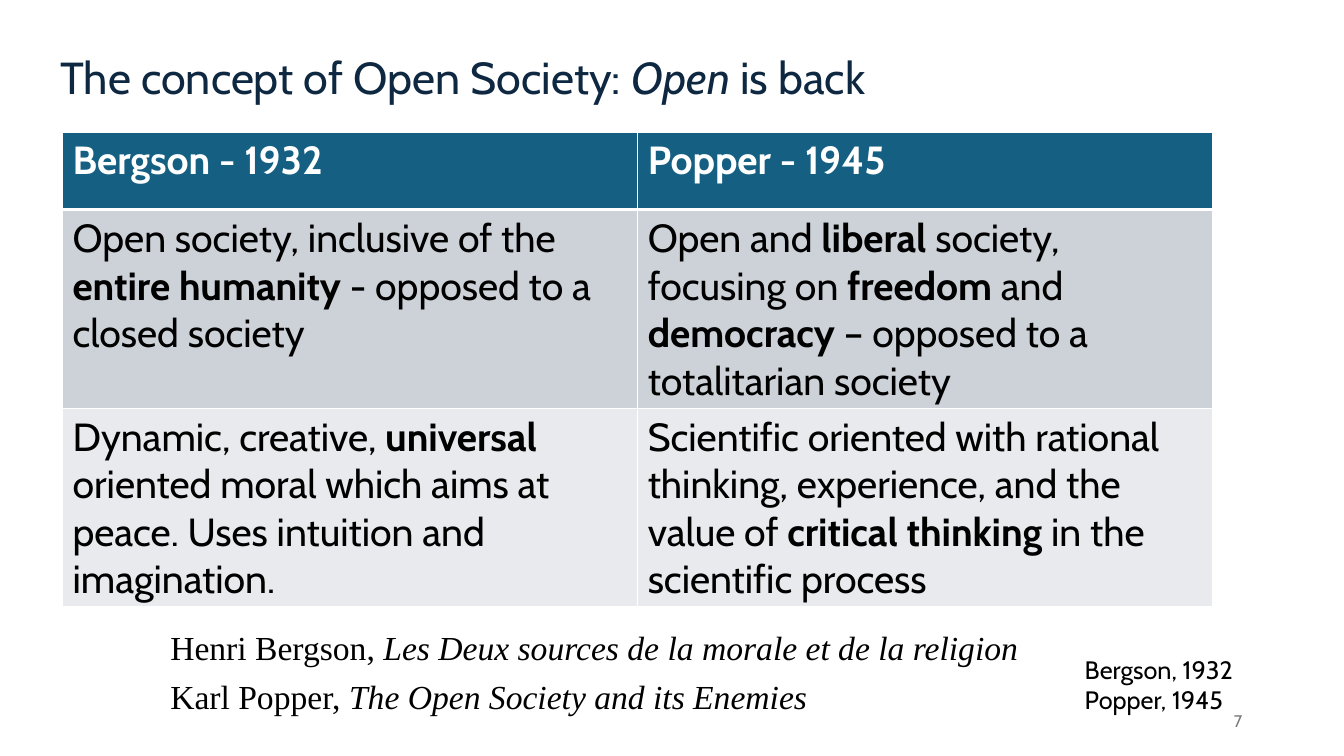
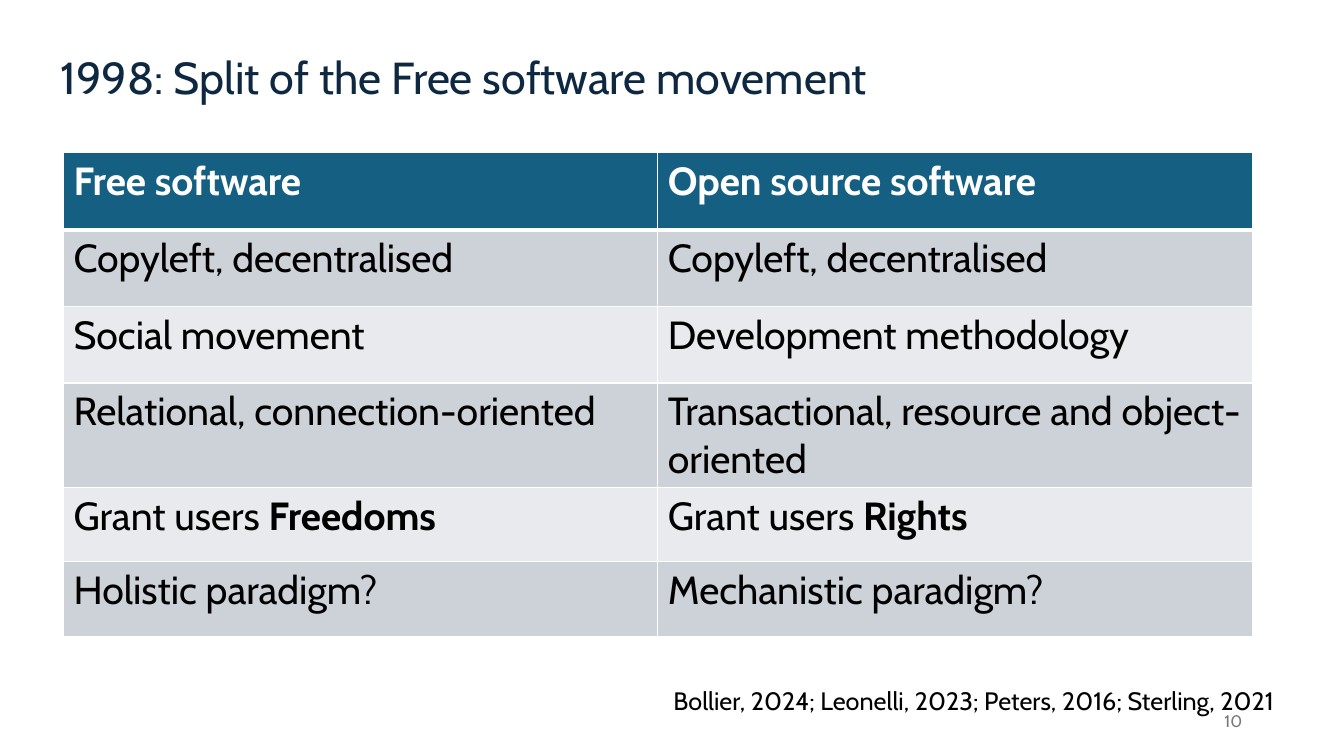
"""Build two comparison slides that share one theme, title and page number."""
from dataclasses import dataclass

from lxml.etree import SubElement
from pptx import Presentation
from pptx.dml.color import RGBColor
from pptx.enum.text import MSO_ANCHOR, MSO_AUTO_SIZE, PP_ALIGN
from pptx.oxml.ns import qn
from pptx.util import Pt

EMU_PER_PX = 9144


@dataclass(frozen=True)
class Theme:
    """Colours, fonts and type sizes of the deck."""

    title: str = "0E2841"
    body: str = "000000"
    muted: str = "797979"
    white: str = "FFFFFF"
    header: str = "156082"
    bands: tuple = ("CCD2D8", "E8EAED")
    font: str = "Cabin"
    book_font: str = "Times New Roman"
    title_size: int = 32
    table_size: int = 28
    book_size: int = 24
    source_size: int = 18
    number_size: int = 12
    grid_width: int = 1
    header_rule_width: int = 3


@dataclass(frozen=True)
class Box:
    """A region of a slide in px."""

    left: int
    top: int
    width: int
    height: int

    def emu(self):
        """Return the four lengths in EMU."""
        return [px(value) for value in (self.left, self.top, self.width, self.height)]


THEME = Theme()
SLIDE_WIDTH, SLIDE_HEIGHT = 1333, 750
NUMBER_BOX = Box(942, 695, 300, 40)


def px(value):
    """Convert px to EMU."""
    return value * EMU_PER_PX


def write(paragraph, text, size, color, font=THEME.font, bold=False, emphasis="italic"):
    """Write text into a paragraph, emphasising the parts between asterisks."""
    for index, part in enumerate(text.split("*")):
        if not part:
            continue
        run = paragraph.add_run()
        run.text = part
        run.font.name = font
        run.font.size = Pt(size)
        run.font.color.rgb = RGBColor.from_string(color)
        run.font.bold = bold
        if index % 2:
            setattr(run.font, emphasis, True)


def add_text(slide, box, lines, size, color, font=THEME.font, wrap=False, space_after=0):
    """Add a text box with one paragraph per line and return its frame."""
    text_frame = slide.shapes.add_textbox(*box.emu()).text_frame
    text_frame.word_wrap = wrap
    text_frame.auto_size = MSO_AUTO_SIZE.SHAPE_TO_FIT_TEXT
    for index, line in enumerate(lines):
        paragraph = text_frame.add_paragraph() if index else text_frame.paragraphs[0]
        paragraph.space_after = Pt(space_after)
        write(paragraph, line, size, color, font)
    return text_frame


def add_page_number(slide, box, number):
    """Add the right-aligned page number."""
    text_frame = add_text(slide, box, [str(number)], THEME.number_size, THEME.muted, wrap=True)
    text_frame.auto_size = MSO_AUTO_SIZE.NONE
    text_frame.vertical_anchor = MSO_ANCHOR.MIDDLE
    text_frame.paragraphs[0].alignment = PP_ALIGN.RIGHT


def set_borders(cell, row_index):
    """Draw white cell borders, with a heavier rule below the header."""
    widths = dict.fromkeys(("lnL", "lnR", "lnT", "lnB"), THEME.grid_width)
    if row_index < 2:
        widths["lnT" if row_index else "lnB"] = THEME.header_rule_width
    properties = cell._tc.get_or_add_tcPr()
    for name, width in widths.items():
        line = SubElement(properties, qn(f"a:{name}"), w=str(Pt(width)))
        fill = SubElement(line, qn("a:solidFill"))
        SubElement(fill, qn("a:srgbClr"), val=THEME.white)


def add_comparison_table(slide, box, rows, heights):
    """Add a table with a header row and banded body rows."""
    column_count = len(rows[0])
    table = slide.shapes.add_table(len(rows), column_count, *box.emu()).table
    for column in table.columns:
        column.width = px(box.width) // column_count
    for row_index, (texts, height) in enumerate(zip(rows, heights)):
        is_header = row_index == 0
        table.rows[row_index].height = px(height)
        fill = THEME.header if is_header else THEME.bands[(row_index - 1) % 2]
        color = THEME.white if is_header else THEME.body
        for column_index, text in enumerate(texts):
            cell = table.cell(row_index, column_index)
            set_borders(cell, row_index)
            cell.fill.solid()
            cell.fill.fore_color.rgb = RGBColor.from_string(fill)
            write(cell.text_frame.paragraphs[0], text, THEME.table_size, color,
                  bold=is_header, emphasis="bold")


def add_comparison_slide(presentation, title, number, table_box, rows, heights,
                         source_box, sources):
    """Add a slide with a title, a comparison table, sources and a page number."""
    slide = presentation.slides.add_slide(presentation.slide_layouts[6])
    title_box = Box(50, 44, 1061, 64)
    add_text(slide, title_box, [title], THEME.title_size, THEME.title, wrap=True)
    add_page_number(slide, NUMBER_BOX, number)
    add_comparison_table(slide, table_box, rows, heights)
    add_text(slide, source_box, sources, THEME.source_size, THEME.body)
    return slide


def add_book_list(slide, box, books):
    """Add the list of books below a table."""
    add_text(slide, box, books, THEME.book_size, THEME.body, THEME.book_font, space_after=6)


def main():
    """Build and save the presentation."""
    presentation = Presentation()
    presentation.slide_width = px(SLIDE_WIDTH)
    presentation.slide_height = px(SLIDE_HEIGHT)

    society_slide = add_comparison_slide(
        presentation,
        "The concept of Open Society: *Open *is back",
        7,
        Box(62, 131, 1141, 471),
        [
            ("Bergson - 1932", "Popper - 1945"),
            ("Open society, inclusive of the *entire humanity *- opposed to a closed society",
             "Open and *liberal* society, focusing on *freedom* and *democracy* – opposed to a "
             "totalitarian society"),
            ("Dynamic, creative, *universal *oriented moral which aims at peace. "
             "Uses intuition and imagination.",
             "Scientific oriented with rational thinking, experience, and the value of "
             "*critical thinking *in the scientific process"),
        ],
        (77, 197, 197),
        Box(1066, 644, 175, 71),
        ["Bergson, 1932", "Popper, 1945"],
    )
    add_book_list(
        society_slide,
        Box(159, 617, 878, 99),
        ["Henri Bergson, *Les Deux sources de la morale et de la religion*",
         "Karl Popper, *The Open Society and its Enemies*"],
    )

    add_comparison_slide(
        presentation,
        "1998: Split of the Free software movement",
        10,
        Box(63, 151, 1179, 480),
        [
            ("Free software", "Open source software"),
            ("Copyleft, decentralised", "Copyleft, decentralised"),
            ("Social movement", "Development methodology"),
            ("Relational, connection-oriented", "Transactional, resource and object-oriented"),
            ("Grant users *Freedoms*", "Grant users *Rights*"),
            ("Holistic paradigm?", "Mechanistic paradigm?"),
        ],
        (77, 76, 76, 103, 74, 74),
        Box(658, 675, 632, 40),
        ["Bollier, 2024; Leonelli, 2023; Peters, 2016; Sterling, 2021"],
    )
    presentation.save("out.pptx")


if __name__ == "__main__":
    main()
